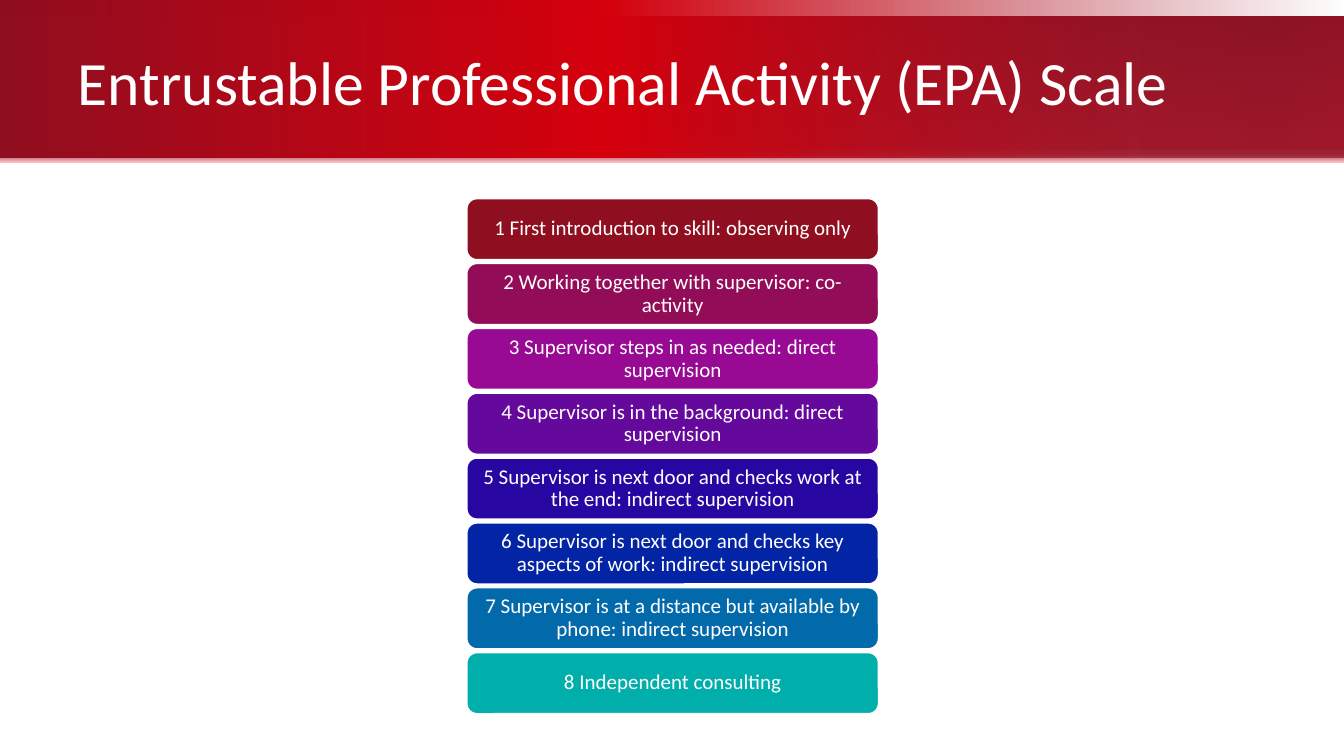
"""Build the Entrustable Professional Activity scale slide."""
from lxml import etree
from pptx import Presentation
from pptx.dml.color import RGBColor
from pptx.enum import shapes, text
from pptx.oxml import ns
from pptx.util import Pt

WHITE = RGBColor(0xFF, 0xFF, 0xFF)
CRIMSON = RGBColor(0x8F, 0x0E, 0x20)
RED = RGBColor(0xD6, 0x00, 0x0D)
WINE = RGBColor(0x89, 0x0D, 0x1F)
FONT = "Calibri"
TITLE = "Entrustable Professional Activity (EPA) Scale"

LEVELS = [
    ("1 First introduction to skill: observing only", CRIMSON),
    ("2 Working together with supervisor: co-activity", RGBColor(0x93, 0x0C, 0x57)),
    ("3 Supervisor steps in as needed: direct supervision", RGBColor(0x98, 0x0A, 0x93)),
    ("4 Supervisor is in the background: direct supervision", RGBColor(0x65, 0x08, 0x9C)),
    ("5 Supervisor is next door and checks work at the end: indirect supervision",
     RGBColor(0x27, 0x06, 0xA1)),
    ("6 Supervisor is next door and checks key aspects of work: indirect supervision",
     RGBColor(0x04, 0x24, 0xA6)),
    ("7 Supervisor is at a distance but available by phone: indirect supervision",
     RGBColor(0x02, 0x69, 0xAA)),
    ("8 Independent consulting", RGBColor(0x00, 0xAF, 0xAB)),
]

# Each band: top, height, angle, stops of (position %, colour, opacity %)
BANDS = [
    (0, 12, 0, [(0, CRIMSON, 100), (45, RED, 100), (100, CRIMSON, 0)]),
    (11.5, 104.5, 90, [(0, RGBColor(0x93, 0x1E, 0x2F), 100),
                       (90, RGBColor(0xBA, 0x2A, 0x3C), 100),
                       (95, RGBColor(0xB5, 0x4E, 0x5C), 100),
                       (100, RGBColor(0xF9, 0xBF, 0xC7), 100)]),
    (11.5, 101, 0, [(0, CRIMSON, 100), (45, RED, 100), (85, CRIMSON, 60),
                    (95, WINE, 60), (100, CRIMSON, 60)]),
]

PAGE_WIDTH, PAGE_HEIGHT = 960, 540
LEVEL_LEFT, LEVEL_TOP = 333.5, 141.9
LEVEL_WIDTH, LEVEL_HEIGHT, LEVEL_STEP = 294, 43.6, 46.33


def add_plain_shape(page, kind, left, top, width, height):
    shape = page.shapes.add_shape(kind, Pt(left), Pt(top), Pt(width), Pt(height))
    shape.shadow.inherit = False
    return shape


def fill_gradient(shape, angle, stops):
    shape.fill.gradient()
    gradient = shape._element.spPr.find(ns.qn("a:gradFill"))
    gradient.find(ns.qn("a:lin")).set("ang", str(angle * 60000))
    stop_list = gradient.find(ns.qn("a:gsLst"))
    for stop in list(stop_list):
        stop_list.remove(stop)
    for position, colour, opacity in stops:
        stop = etree.SubElement(stop_list, ns.qn("a:gs"), pos=str(position * 1000))
        shade = etree.SubElement(stop, ns.qn("a:srgbClr"), val=str(colour))
        if opacity < 100:
            etree.SubElement(shade, ns.qn("a:alpha"), val=str(opacity * 1000))


def write_text(shape, wording, size, side, edge):
    frame = shape.text_frame
    frame.text = wording
    frame.word_wrap = True
    frame.auto_size = text.MSO_AUTO_SIZE.NONE
    frame.vertical_anchor = text.MSO_ANCHOR.MIDDLE
    frame.margin_left = frame.margin_right = Pt(side)
    frame.margin_top = frame.margin_bottom = Pt(edge)
    para = frame.paragraphs[0]
    para.alignment = text.PP_ALIGN.CENTER
    para.line_spacing = 0.9
    para.font.name = FONT
    para.font.size = Pt(size)
    para.font.color.rgb = WHITE


def add_header(page):
    for top, height, angle, stops in BANDS:
        band = add_plain_shape(page, shapes.MSO_SHAPE.RECTANGLE, 0, top, PAGE_WIDTH, height)
        fill_gradient(band, angle, stops)
        band.line.fill.background()
    title = page.shapes.title
    title.left, title.top, title.width, title.height = Pt(48), Pt(11.5), Pt(795), Pt(98.5)
    write_text(title, TITLE, 44, 7.2, 3.6)
    page.shapes._spTree.append(title._element)


def add_levels(page):
    for index, (wording, colour) in enumerate(LEVELS):
        level = add_plain_shape(page, shapes.MSO_SHAPE.ROUNDED_RECTANGLE, LEVEL_LEFT,
                                LEVEL_TOP + index * LEVEL_STEP, LEVEL_WIDTH, LEVEL_HEIGHT)
        level.fill.solid()
        level.fill.fore_color.rgb = colour
        level.line.color.rgb = WHITE
        level.line.width = Pt(1)
        write_text(level, wording, 15, 4.5, 2.25)


def main():
    deck = Presentation()
    deck.slide_width, deck.slide_height = Pt(PAGE_WIDTH), Pt(PAGE_HEIGHT)
    page = deck.slides.add_slide(deck.slide_layouts.get_by_name("Title Only"))
    add_header(page)
    add_levels(page)
    deck.save("out.pptx")


if __name__ == "__main__":
    main()
